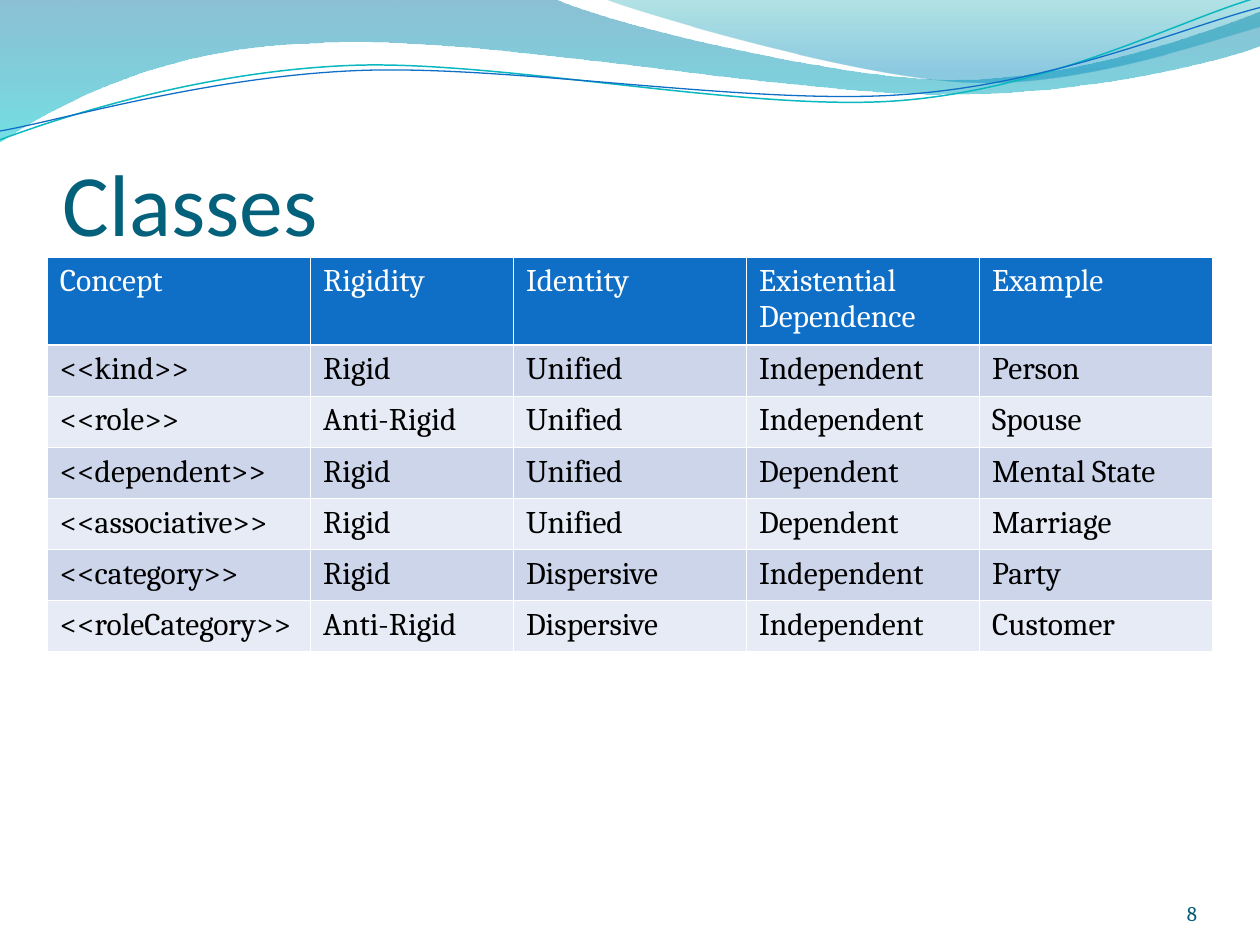
from dataclasses import dataclass

from lxml import etree
from pptx import Presentation
from pptx.dml.color import RGBColor
from pptx.enum.text import MSO_ANCHOR, PP_ALIGN
from pptx.oxml.ns import qn
from pptx.util import Pt

BOTTOM = MSO_ANCHOR.BOTTOM
LEFT, RIGHT = PP_ALIGN.LEFT, PP_ALIGN.RIGHT


@dataclass(frozen=True)
class Theme:
    head: str = "Calibri"
    body: str = "Cambria"
    title: str = "04617B"
    page: str = "045D75"
    blue: str = "0F6FC6"
    teal: str = "0AB8BF"
    white: str = "FFFFFF"
    black: str = "000000"
    bands: tuple = ("CCD5EA", "E7EBF5")
    # Gradient stops: position, colour, opacity in percent
    deep: tuple = ((0, "0074A1", 45), (1, "00C6CF", 55))
    pale: tuple = ((0, "00A1A9", 30), (0.8, "008BBF", 45))
    big: int = 50
    text: int = 18
    small: int = 12


THEME = Theme()
TILT = 357.3

# Wave outlines in points: a pair is a corner, a set of six is a curve
DEEP = [(0, 0), (316.8, -0.7), (342.7, 12.2, 478.1, 45.4, 545.8, 45.4),
        (614.2, 45.4, 689.8, 18.7, 720, 6.5), (720.7, 25.9),
        (707.8, 31.7, 626.4, 54.7, 537.1, 54),
        (447.8, 54, 275, 20.2, 185, 24.5),
        (92.9, 25.9, 33.1, 59.8, -0.7, 81.4), (0, 0)]
PALE = [(344.9, -0.7), (366.5, 7.9, 491, 44.6, 553.7, 46.8),
        (616.3, 49.7, 691.9, 23, 720, 15.1), (720, 0), (344.9, -0.7)]
# Lines as they lie before the tilt
UPPER = [(-1.4, 62.9), (33.8, 51.7, 114.1, 29.4, 199.8, 29.9),
         (284.8, 30.3, 425.9, 67.3, 512.5, 64.8),
         (599.1, 62.4, 676.5, 25.7, 720.2, 15.6)]
LOWER = [(-1.1, 57.9), (32.9, 53.7, 118.3, 32.5, 204.1, 33),
         (290.6, 33.4, 428.9, 63.8, 515.5, 61.4),
         (601.4, 59.6, 678.4, 30.1, 721.4, 21.3)]

ROWS = [
    ("Concept", "Rigidity", "Identity", "Existential Dependence", "Example"),
    ("<<kind>>", "Rigid", "Unified", "Independent", "Person"),
    ("<<role>>", "Anti-Rigid", "Unified", "Independent", "Spouse"),
    ("<<dependent>>", "Rigid", "Unified", "Dependent", "Mental State"),
    ("<<associative>>", "Rigid", "Unified", "Dependent", "Marriage"),
    ("<<category>>", "Rigid", "Dispersive", "Independent", "Party"),
    ("<<roleCategory>>", "Anti-Rigid", "Dispersive", "Independent", "Customer"),
]
SHARES = (2.09, 1.61, 1.85, 1.85, 1.85)
ROW_HIGH = 29.2


def color(code):
    return RGBColor.from_string(code)


def draw(slide, box, parts, close):
    left, top = box[:2]
    points = [(Pt(left + x), Pt(top + y)) for part in parts
              for x, y in zip(part[::2], part[1::2])]
    build = slide.shapes.build_freeform(*points[0])
    build.add_line_segments(points[1:], close=close)
    shape = build.convert_to_shape()
    shape.shadow.inherit = False
    # Join three straight steps into each curve
    steps = iter(list(shape._element.iter(qn("a:lnTo"))))
    for part in parts[1:]:
        step = next(steps)
        if len(part) == 6:
            step.addprevious(curve := etree.Element(qn("a:cubicBezTo")))
            for item in (step, next(steps), next(steps)):
                curve.append(item[0])
                item.getparent().remove(item)
    return shape


def add_waves(slide, box):
    # Translucent bands
    for parts, stops in ((DEEP, THEME.deep), (PALE, THEME.pale)):
        band = draw(slide, box, parts, True)
        band.line.fill.background()
        band.fill.gradient()
        band.fill.gradient_angle = 270
        for stop, (pos, code, _) in zip(band.fill.gradient_stops, stops):
            stop.position = pos
            stop.color.rgb = color(code)
        tints = band._element.spPr.iter(qn("a:srgbClr"))
        for tint, (_, _, alpha) in zip(tints, stops):
            etree.SubElement(tint, qn("a:alpha"), val=str(alpha * 1000))
    # Thin lines
    for parts, code, width in ((UPPER, THEME.teal, 0.85),
                               (LOWER, THEME.blue, 0.75)):
        wave = draw(slide, box, parts, False)
        wave.rotation = TILT
        wave.fill.background()
        wave.line.color.rgb = color(code)
        wave.line.width = Pt(width)


def add_run(para, text, font, size, code):
    run = para.add_run()
    run.text = text
    run.font.name = font
    run.font.size = Pt(size)
    run.font.bold = False
    run.font.color.rgb = color(code)


def add_label(slide, box, text, font, size, code, align=LEFT, pad=0):
    frame = slide.shapes.add_textbox(*map(Pt, box)).text_frame
    frame.word_wrap = True
    frame.vertical_anchor = BOTTOM
    frame.margin_left = frame.margin_right = frame.margin_bottom = 0
    frame.margin_top = Pt(pad)
    para = frame.paragraphs[0]
    para.alignment = align
    add_run(para, text, font, size, code)


def add_grid(slide, box):
    width, height = box[2:]
    frame = slide.shapes.add_table(len(ROWS), len(SHARES), *map(Pt, box))
    table = frame.table
    for col, share in zip(table.columns, SHARES):
        col.width = Pt(width * share / sum(SHARES))
    for r, texts in enumerate(ROWS):
        table.rows[r].height = Pt(ROW_HIGH)
        back = THEME.bands[(r - 1) % 2] if r else THEME.blue
        ink = THEME.black if r else THEME.white
        for c, text in enumerate(texts):
            cell = table.cell(r, c)
            cell.fill.solid()
            cell.fill.fore_color.rgb = color(back)
            add_run(cell.text_frame.paragraphs[0], text,
                    THEME.body, THEME.text, ink)
    frame.height = Pt(height)


def main():
    deck = Presentation()
    deck.slide_width, deck.slide_height = Pt(720), Pt(540)
    slide = deck.slides.add_slide(deck.slide_layouts[6])
    add_waves(slide, (0, 0, 720, 82))
    add_label(slide, (36, 55.4, 648, 90), "Classes",
              THEME.head, THEME.big, THEME.title, pad=3.6)
    add_grid(slide, (27, 146.8, 666, 247))
    add_label(slide, (624, 500.2, 60, 28.8), "8",
              THEME.body, THEME.small, THEME.page, RIGHT)
    deck.save("out.pptx")


if __name__ == "__main__":
    main()
